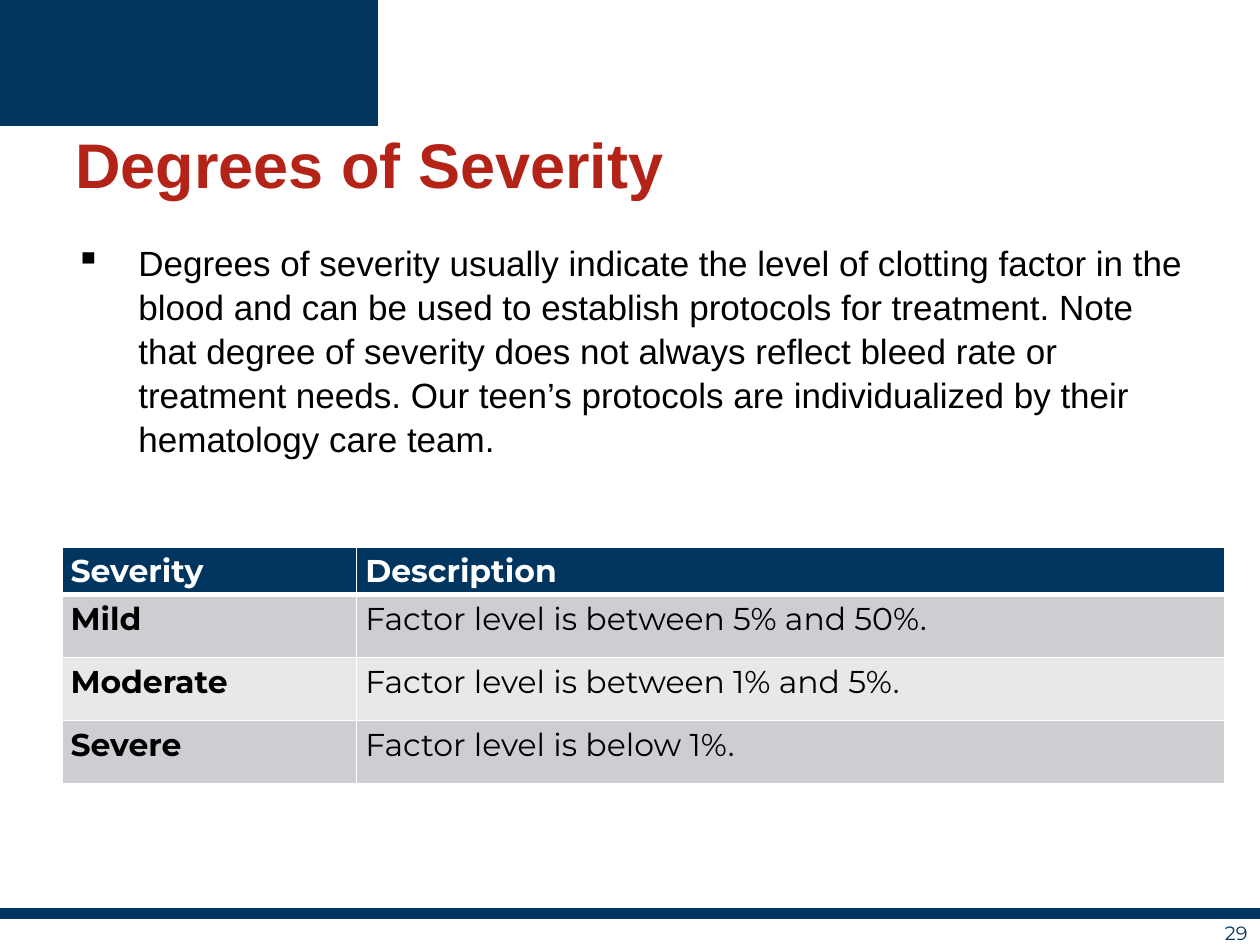
import pptx
import pptx.dml.color
import pptx.enum.text
import pptx.oxml
import pptx.oxml.ns
import pptx.util
from lxml import etree

Inches, Pt = pptx.util.Inches, pptx.util.Pt
RGBColor = pptx.dml.color.RGBColor
ANCHOR, ALIGN = pptx.enum.text.MSO_ANCHOR, pptx.enum.text.PP_ALIGN
qn = pptx.oxml.ns.qn

TITLE = "Degrees of Severity"
BODY = (
    "Degrees of severity usually indicate the level of clotting factor in the blood "
    "and can be used to establish protocols for treatment. Note that degree of severity "
    "does not always reflect bleed rate or treatment needs. Our teen’s protocols are "
    "individualized by their hematology care team."
)
PAGE_NUMBER = "29"
SEVERITY_ROWS = [
    ("Severity", "Description"),
    ("Mild", "Factor level is between 5% and 50%."),
    ("Moderate", "Factor level is between 1% and 5%."),
    ("Severe", "Factor level is below 1%."),
]

NAVY = RGBColor(0x00, 0x35, 0x5F)
RED = RGBColor(0xB3, 0x23, 0x17)
BLACK = RGBColor(0x00, 0x00, 0x00)
WHITE = RGBColor(0xFF, 0xFF, 0xFF)
BANDS = [RGBColor(0xE7, 0xE8, 0xEA), RGBColor(0xCC, 0xCE, 0xD2)]

WIDTH, HEIGHT = 10, 7.5
MARGIN = WIDTH * 0.05
COLUMN_WIDTHS = [2.34, 6.89]
HEADER_HEIGHT, ROW_HEIGHT = 0.38, 0.5

# Lower edge of the banner, right to left: each curve is two controls and an end
BANNER_START = (10, 0.4)
BANNER_CURVES = [
    ((6.51, 0.21), (5.67, 0.31), (4.47, 0.37)),
    ((2.08, 0.48), (0.57, 0.9), (0, 1.16)),
]
CURVE_STEPS = 40


def bezier(start, control1, control2, end):
    for step in range(1, CURVE_STEPS + 1):
        t = step / CURVE_STEPS
        weights = ((1 - t) ** 3, 3 * t * (1 - t) ** 2, 3 * t * t * (1 - t), t ** 3)
        points = (start, control1, control2, end)
        yield tuple(sum(w * p[axis] for w, p in zip(weights, points)) for axis in (0, 1))


def add_banner(slide):
    outline = [(WIDTH, 0), BANNER_START]
    for curve in BANNER_CURVES:
        outline.extend(bezier(outline[-1], *curve))
    builder = slide.shapes.build_freeform(0, 0, scale=Inches(1))
    builder.add_line_segments(outline, close=True)
    banner = builder.convert_to_shape()
    banner.shadow.inherit = False
    banner.fill.solid()
    banner.fill.fore_color.rgb = NAVY
    banner.line.fill.background()


def add_footer_rule(slide):
    y = Inches(7.25)
    rule = slide.shapes.add_connector(
        pptx.enum.shapes.MSO_CONNECTOR.STRAIGHT, 0, y, Inches(WIDTH), y)
    rule.line.color.rgb = NAVY
    rule.line.width = Pt(6.75)
    etree.SubElement(rule._element.spPr, qn("a:effectLst"))


def style(font, name, size, color, bold=False):
    font.name, font.size, font.bold = name, Pt(size), bold
    font.color.rgb = color


def add_text(slide, text, box, anchor, *font_style):
    frame = slide.shapes.add_textbox(*map(Inches, box)).text_frame
    frame.word_wrap = True
    frame.vertical_anchor = anchor
    frame.text = text
    paragraph = frame.paragraphs[0]
    style(paragraph.runs[0].font, *font_style)
    return paragraph


def add_bullet(paragraph, indent):
    properties = paragraph._p.get_or_add_pPr()
    properties.set("marL", str(Inches(indent)))
    properties.set("indent", str(-Inches(indent)))
    etree.SubElement(properties, qn("a:buChar"), char="▪")


def set_borders(cell, bottom_width):
    properties = cell._tc.get_or_add_tcPr()
    for index, side in enumerate(("L", "R", "T", "B")):
        width = bottom_width if side == "B" else 1
        line = etree.Element(qn("a:ln" + side), w=str(Pt(width)))
        fill = etree.SubElement(line, qn("a:solidFill"))
        etree.SubElement(fill, qn("a:srgbClr"), val=str(WHITE))
        properties.insert(index, line)


def add_severity_table(slide):
    heights = [HEADER_HEIGHT] + [ROW_HEIGHT] * (len(SEVERITY_ROWS) - 1)
    box = (0.49, 4.34, sum(COLUMN_WIDTHS), sum(heights))
    table = slide.shapes.add_table(
        len(heights), len(COLUMN_WIDTHS), *map(Inches, box)).table
    for column, width in zip(table.columns, COLUMN_WIDTHS):
        column.width = Inches(width)
    for r, (row, height) in enumerate(zip(SEVERITY_ROWS, heights)):
        table.rows[r].height = Inches(height)
        header = r == 0
        for c, text in enumerate(row):
            cell = table.cell(r, c)
            cell.margin_left = cell.margin_right = Inches(0.07)
            cell.margin_top = cell.margin_bottom = Inches(0.04)
            cell.text = text
            style(cell.text_frame.paragraphs[0].runs[0].font, "Montserrat", 18,
                  WHITE if header else BLACK, header or c == 0)
            cell.fill.solid()
            cell.fill.fore_color.rgb = NAVY if header else BANDS[r % 2]
            set_borders(cell, 3 if header else 1)


def main():
    deck = pptx.Presentation()
    deck.slide_width, deck.slide_height = Inches(WIDTH), Inches(HEIGHT)
    slide = deck.slides.add_slide(deck.slide_layouts[6])
    add_footer_rule(slide)
    add_banner(slide)
    content_width = WIDTH - 2 * MARGIN
    add_text(slide, TITLE, (MARGIN, 0.8, content_width, 1), ANCHOR.MIDDLE,
             "Arial", 36, RED, True)
    body = add_text(slide, BODY, (MARGIN, 1.85, content_width, 4.78), ANCHOR.TOP,
                    "Arial", 20, BLACK)
    body.line_spacing = 1.05
    body.space_after = Pt(6)
    add_bullet(body, 0.5)
    number = add_text(slide, PAGE_NUMBER, (8.83, 7.32, 1.17, 0.17), ANCHOR.MIDDLE,
                      "Montserrat", 11, NAVY)
    number.alignment = ALIGN.RIGHT
    add_severity_table(slide)
    deck.save("out.pptx")


if __name__ == "__main__":
    main()
